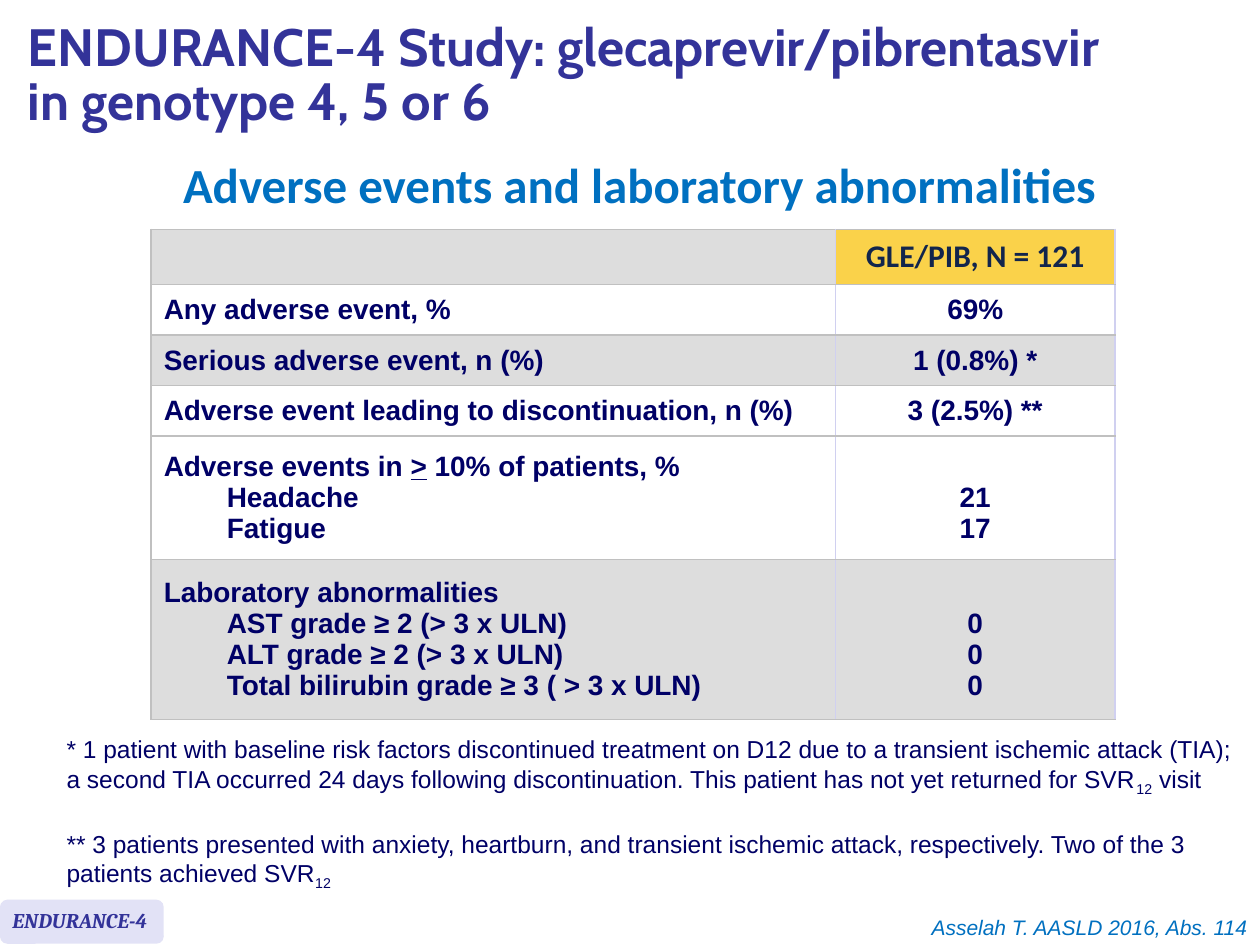
from dataclasses import dataclass

from lxml import etree
from pptx import Presentation
from pptx.dml.color import RGBColor
from pptx.enum.shapes import MSO_SHAPE
from pptx.enum.text import MSO_ANCHOR, MSO_AUTO_SIZE, PP_ALIGN
from pptx.oxml.ns import qn
from pptx.util import Inches, Pt

LEFT, CENTER, RIGHT = PP_ALIGN.LEFT, PP_ALIGN.CENTER, PP_ALIGN.RIGHT
MIDDLE = MSO_ANCHOR.MIDDLE
ROUNDED = MSO_SHAPE.ROUNDED_RECTANGLE
NO_AUTOFIT = MSO_AUTO_SIZE.NONE

COLORS = {
    "title": "333399", "accent": "0070C0", "body": "000066",
    "header": "12254C", "gold": "FAD24A", "gray": "DDDDDD", "white": "FFFFFF",
    "badge": "E2E2F6", "row_line": "C0C0C0", "column_line": "D0D0F0",
}
LINE_HEIGHT = 0.25  # one line of 16 pt table text, in inches


@dataclass
class TextStyle:
    font: str
    size: float
    color: str
    bold: bool = False
    italic: bool = False
    align: PP_ALIGN = LEFT


@dataclass
class Run:
    text: str
    underline: bool = False
    subscript: bool = False


@dataclass
class ResultRow:
    height: float
    fill: str
    label: list[Run]
    values: list[str]
    details: tuple[str, ...] = ()


TITLE = TextStyle("Cabin", 30, "title", bold=True)
SUBTITLE = TextStyle("Calibri", 28, "accent", bold=True, align=CENTER)
HEADER = TextStyle("Calibri", 18, "header", bold=True, align=CENTER)
LABEL = TextStyle("Arial", 16, "body", bold=True)
VALUE = TextStyle("Arial", 16, "body", bold=True, align=CENTER)
FOOTNOTE = TextStyle("Arial", 14, "body")
BADGE = TextStyle("Cambria", 12, "title", bold=True, italic=True)
CITATION = TextStyle("Arial", 12, "accent", italic=True, align=RIGHT)

RESULTS = [
    ResultRow(0.4, "white", [Run("Any adverse event, %")], ["69%"]),
    ResultRow(0.4, "gray", [Run("Serious adverse event, n (%)")], ["1 (0.8%) *"]),
    ResultRow(0.4, "white", [Run("Adverse event leading to discontinuation, n (%)")],
              ["3 (2.5%) **"]),
    ResultRow(0.98, "white",
              [Run("Adverse events in "), Run(">", underline=True),
               Run(" 10% of patients, %")],
              ["21", "17"], ("Headache", "Fatigue")),
    ResultRow(1.27, "gray", [Run("Laboratory abnormalities")], ["0", "0", "0"],
              ("AST grade ≥ 2 (> 3 x ULN)", "ALT grade ≥ 2 (> 3 x ULN)",
               "Total bilirubin grade ≥ 3 ( > 3 x ULN)")),
]

FOOTNOTES = [
    [Run("* 1 patient with baseline risk factors discontinued treatment on D12 due to "
         "a transient ischemic attack (TIA); a second TIA occurred 24 days following "
         "discontinuation. This patient has not yet returned for SVR"),
     Run("12", subscript=True), Run(" visit")],
    [Run("** 3 patients presented with anxiety, heartburn, and transient ischemic "
         "attack, respectively. Two of the 3 patients achieved SVR"),
     Run("12", subscript=True)],
]


def rgb(name: str) -> RGBColor:
    return RGBColor.from_string(COLORS[name])


def style_paragraph(paragraph, style: TextStyle) -> None:
    paragraph.alignment = style.align
    font = paragraph.font
    font.name, font.size = style.font, Pt(style.size)
    font.bold, font.italic = style.bold, style.italic
    font.color.rgb = rgb(style.color)


def write(frame, paragraphs: list[list[Run]], style: TextStyle) -> None:
    for index, runs in enumerate(paragraphs):
        paragraph = frame.add_paragraph() if index else frame.paragraphs[0]
        for part in runs:
            run = paragraph.add_run()
            run.text = part.text
            if part.underline:
                run.font.underline = True
            if part.subscript:
                run.font._element.set("baseline", "-25000")
        style_paragraph(paragraph, style)


def add_text(slide, left: float, top: float, width: float, height: float,
             paragraphs: list[list[Run]], style: TextStyle):
    box = slide.shapes.add_textbox(Inches(left), Inches(top), Inches(width), Inches(height))
    box.text_frame.word_wrap = True
    write(box.text_frame, paragraphs, style)
    return box.text_frame


def format_cell(cell, fill: str, left_line: str) -> None:
    cell.vertical_anchor = MIDDLE
    properties = cell._tc.get_or_add_tcPr()
    sides = {"lnL": left_line, "lnR": "column_line", "lnT": "row_line", "lnB": "row_line"}
    for tag, color in sides.items():
        line = etree.SubElement(properties, qn(f"a:{tag}"), w=str(Pt(1)))
        solid = etree.SubElement(line, qn("a:solidFill"))
        etree.SubElement(solid, qn("a:srgbClr"), val=COLORS[color])
    cell.fill.solid()
    cell.fill.fore_color.rgb = rgb(fill)


def add_results_table(slide) -> None:
    heights = [0.44] + [row.height for row in RESULTS]
    table = slide.shapes.add_table(len(heights), 2, Inches(1.2), Inches(1.82),
                                   Inches(7.65), Inches(sum(heights))).table
    table.first_row = table.horz_banding = False
    for column, width in zip(table.columns, (5.43, 2.22)):
        column.width = Inches(width)
    for table_row, height in zip(table.rows, heights):
        table_row.height = Inches(height)

    # Header row
    format_cell(table.cell(0, 0), "gray", "row_line")
    format_cell(table.cell(0, 1), "gold", "column_line")
    write(table.cell(0, 1).text_frame, [[Run("GLE/PIB, N = 121")]], HEADER)

    # Result rows
    for index, row in enumerate(RESULTS, start=1):
        label, value = table.cell(index, 0), table.cell(index, 1)
        format_cell(label, row.fill, "row_line")
        format_cell(value, row.fill, "column_line")
        write(label.text_frame, [row.label] + [[Run(text)] for text in row.details], LABEL)
        for paragraph in label.text_frame.paragraphs[1:]:
            paragraph._p.get_or_add_pPr().set("marL", str(Inches(0.5)))
        write(value.text_frame, [[Run(text)] for text in row.values], VALUE)
        if row.details:  # line the values up with the details, below the label
            value.margin_top = Inches(0.05 + LINE_HEIGHT)


def main() -> None:
    prs = Presentation()
    prs.slide_width, prs.slide_height = Inches(10), Inches(7.5)
    slide = prs.slides.add_slide(prs.slide_layouts[5])

    # Title and subtitle
    title = slide.shapes.title
    title.left, title.top = Inches(0.12), Inches(0.08)
    title.width, title.height = Inches(9.88), Inches(1.07)
    frame = title.text_frame
    frame.text = "ENDURANCE-4 Study: glecaprevir/pibrentasvir\vin genotype 4, 5 or 6"
    frame.auto_size, frame.vertical_anchor = NO_AUTOFIT, MIDDLE
    frame.paragraphs[0].line_spacing = 0.85
    style_paragraph(frame.paragraphs[0], TITLE)
    subtitle = add_text(slide, 0.35, 1.43, 9.45, 0.36,
                        [[Run("Adverse events and laboratory abnormalities")]], SUBTITLE)
    subtitle.paragraphs[0].line_spacing = Pt(15.2)

    add_results_table(slide)

    # Footnotes
    notes = add_text(slide, 0.43, 5.78, 9.53, 1.28, FOOTNOTES, FOOTNOTE)
    notes.paragraphs[1].space_before = Pt(18)

    # Study badge and citation
    badge = slide.shapes.add_shape(ROUNDED, 0, Inches(7.14), Inches(1.3), Inches(0.35))
    badge.shadow.inherit = False
    badge.fill.solid()
    badge.fill.fore_color.rgb = rgb("badge")
    badge.line.fill.background()
    add_text(slide, 0, 7.15, 1.3, 0.3, [[Run("ENDURANCE-4")]], BADGE)
    add_text(slide, 2.64, 7.21, 7.36, 0.3, [[Run("Asselah T. AASLD 2016, Abs. 114")]], CITATION)

    prs.save("out.pptx")


if __name__ == "__main__":
    main()
